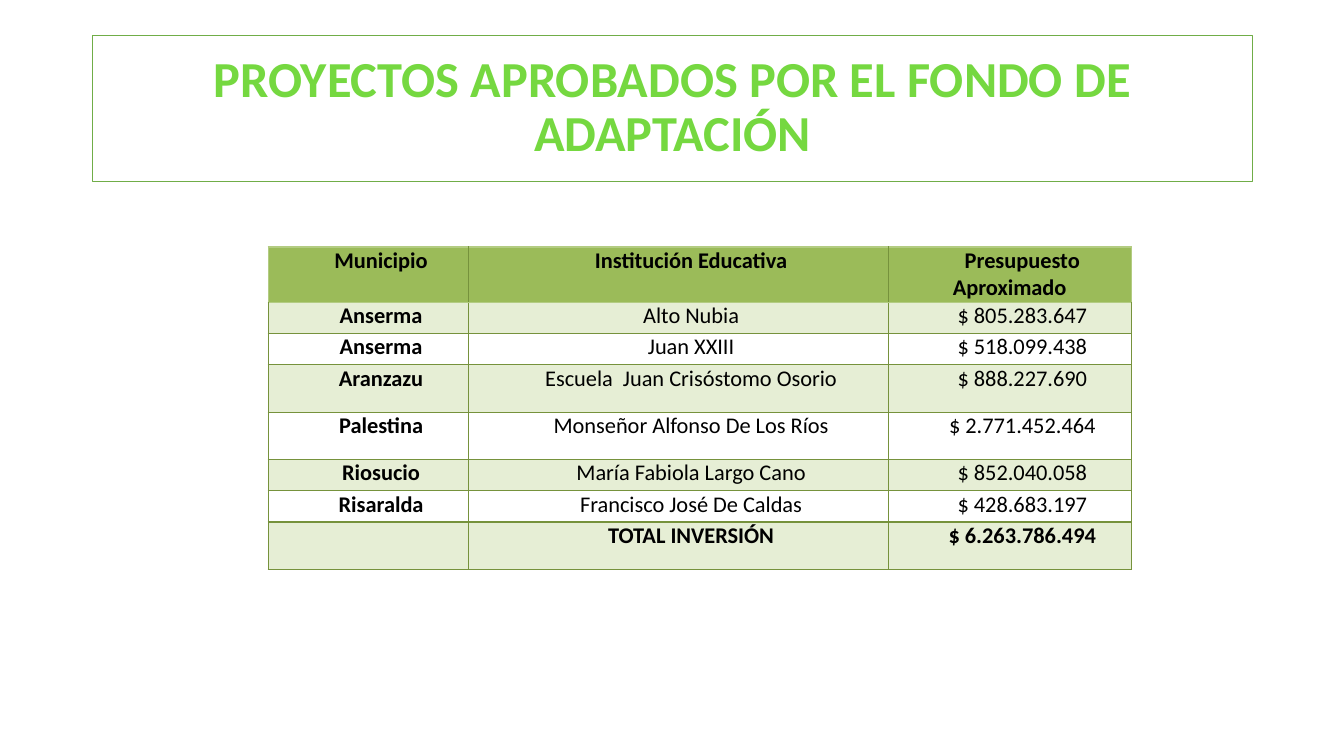
from dataclasses import dataclass

from lxml import etree
from pptx import Presentation
from pptx import util as u
from pptx.dml.color import RGBColor
from pptx.enum import text
from pptx.oxml import ns


@dataclass(frozen=True)
class Theme:
    font: str = "Calibri"
    title_size: int = 36
    cell_size: int = 16
    title: str = "75D840"
    ink: str = "000000"
    paper: str = "FFFFFF"
    frame: str = "70AD47"
    head: str = "9BBB59"
    band: str = "E6EED5"
    grid: str = "76923C"
    edge: str = "B3CC82"


HEADS = ("Municipio", "Institución Educativa", "Presupuesto Aproximado")
PROJECTS = (
    ("Anserma", "Alto Nubia", "$ 805.283.647"),
    ("Anserma", "Juan XXIII", "$ 518.099.438"),
    ("Aranzazu", "Escuela  Juan Crisóstomo Osorio", "$ 888.227.690"),
    ("Palestina", "Monseñor Alfonso De Los Ríos", "$ 2.771.452.464"),
    ("Riosucio", "María Fabiola Largo Cano", "$ 852.040.058"),
    ("Risaralda", "Francisco José De Caldas", "$ 428.683.197"),
)
TOTAL = ("", "TOTAL INVERSIÓN", "$ 6.263.786.494")
WIDTHS = (1.99, 4.16, 2.41)
SHORT, TALL = 0.31, 0.47
HEIGHTS = (0.55, SHORT, SHORT, TALL, TALL, SHORT, SHORT, TALL)


def paint(fill, color):
    fill.solid()
    fill.fore_color.rgb = RGBColor.from_string(color)


def write(frame, words, *, font, size, color, bold=False, indent=0, spacing=None):
    """Fill a text frame with one centred paragraph."""
    para = frame.paragraphs[0]
    para.alignment = text.PP_ALIGN.CENTER
    para.line_spacing = spacing
    if indent:
        props = para._p.get_or_add_pPr()
        props.set("marL", "0")
        props.set("indent", str(u.Inches(indent)))
    run = para.add_run()
    run.text = words
    run.font.name = font
    run.font.size = u.Pt(size)
    run.font.bold = bold
    run.font.color.rgb = RGBColor.from_string(color)


def border(cell, colors):
    """Draw the left, right, top and bottom borders, in that order."""
    props = cell._tc.get_or_add_tcPr()
    for spot, (side, color) in enumerate(zip("LRTB", colors)):
        line = etree.Element(ns.qn(f"a:ln{side}"), w=str(u.Pt(1)))
        fill = etree.SubElement(line, ns.qn("a:solidFill"))
        etree.SubElement(fill, ns.qn("a:srgbClr"), val=color)
        props.insert(spot, line)


class Deck:
    def __init__(self, theme):
        self.theme = theme
        self.file = Presentation()
        self.file.slide_width = u.Inches(13.33)
        self.file.slide_height = u.Inches(7.5)
        self.slide = self.file.slides.add_slide(self.file.slide_layouts[5])

    def title(self, words, left, top, width, height):
        look, box = self.theme, self.slide.shapes.title
        box.left, box.top = u.Inches(left), u.Inches(top)
        box.width, box.height = u.Inches(width), u.Inches(height)
        paint(box.fill, look.paper)
        paint(box.line.fill, look.frame)
        box.line.width = u.Pt(1)
        frame = box.text_frame
        frame.word_wrap = True
        frame.auto_size = text.MSO_AUTO_SIZE.NONE
        frame.vertical_anchor = text.MSO_ANCHOR.MIDDLE
        write(frame, words, font=look.font, size=look.title_size,
              color=look.title, bold=True, spacing=0.9)

    def table(self, rows, widths, heights, left, top):
        """Add a table with a header, banded rows and a total row."""
        grid = self.slide.shapes.add_table(
            len(rows), len(widths), u.Inches(left), u.Inches(top),
            u.Inches(sum(widths)), u.Inches(sum(heights))).table
        grid.first_row = grid.horz_banding = False
        for col, width in zip(grid.columns, widths):
            col.width = u.Inches(width)
        for row, height in zip(grid.rows, heights):
            row.height = u.Inches(height)
        for r, row in enumerate(rows):
            for c, words in enumerate(row):
                bold = r in (0, len(rows) - 1) or c == 0
                self.cell(grid.cell(r, c), words, r, bold)
                border(grid.cell(r, c), self.edges(r, c, len(widths) - 1))

    def cell(self, cell, words, r, bold):
        look = self.theme
        cell.margin_left = cell.margin_right = u.Inches(0.07)
        cell.margin_top = cell.margin_bottom = 0
        paint(cell.fill, look.head if r == 0 else look.band if r % 2 else look.paper)
        if words:
            write(cell.text_frame, words, font=look.font, size=look.cell_size,
                  color=look.ink, bold=bold, indent=0.25)

    def edges(self, r, c, last):
        """Light lines around the header, dark lines elsewhere."""
        edge, grid = self.theme.edge, self.theme.grid
        return (edge if r == 0 and c == 0 else grid,
                edge if r == 0 and c == last else grid,
                edge if r < 2 else grid,
                edge if r == 0 else grid)


def main():
    deck = Deck(Theme())
    deck.title("PROYECTOS APROBADOS POR EL FONDO DE ADAPTACIÓN",
               0.92, 0.35, 11.5, 1.45)
    deck.table((HEADS, *PROJECTS, TOTAL), WIDTHS, HEIGHTS, 2.66, 2.45)
    deck.file.save("out.pptx")


if __name__ == "__main__":
    main()
